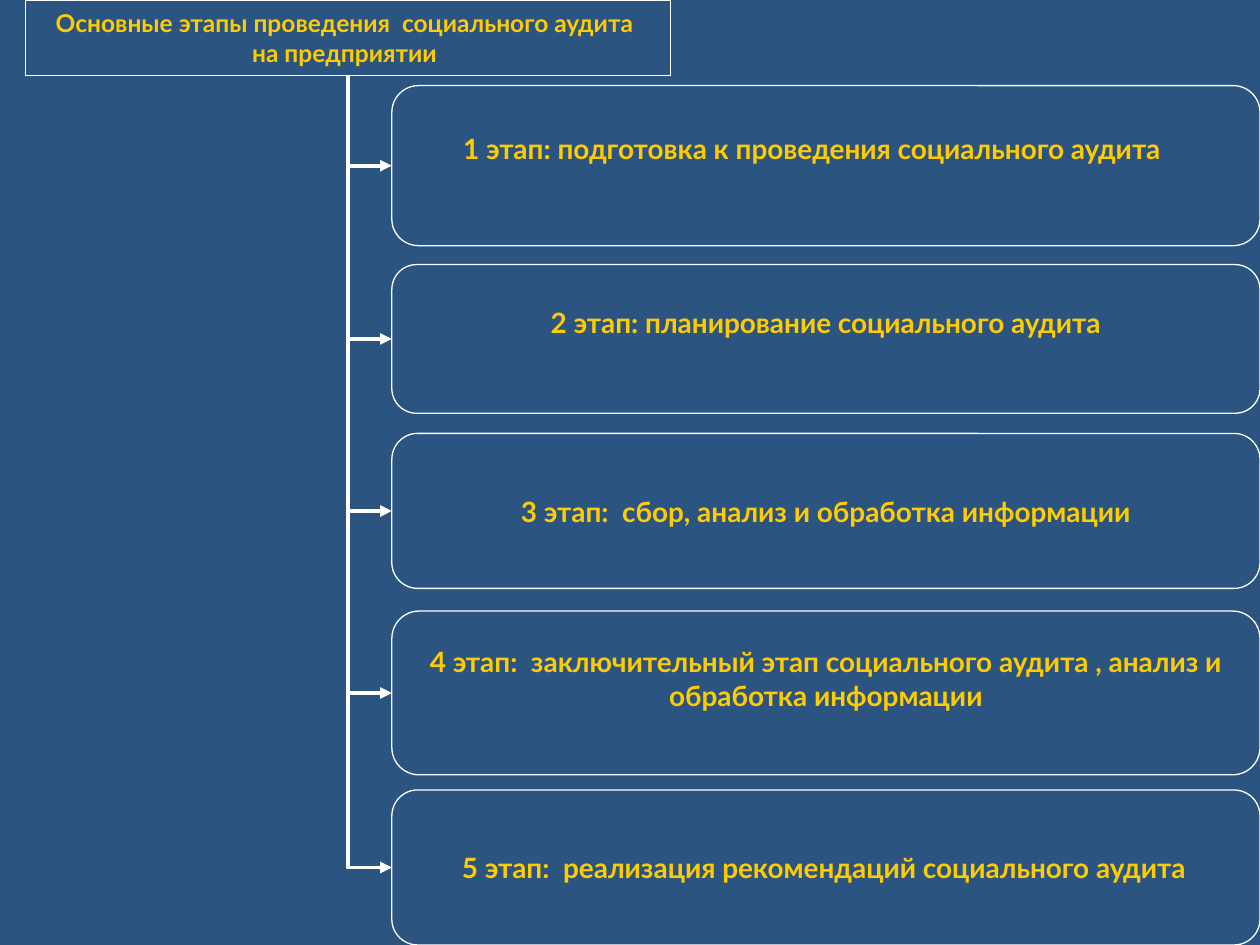
import pptx
import pptx.util
import pptx.dml.color
import pptx.enum.shapes
import pptx.enum.text
from dataclasses import dataclass
from lxml import etree
from pptx.oxml.ns import qn

# Content: text, top, height, right inset, bottom inset (inches)
HEADING = ["Основные этапы проведения  социального аудита", "на предприятии"]
STAGES = [
    ("1 этап: подготовка к проведения социального аудита", 0.68, 1.27, 0.22, 0.27),
    ("2 этап: планирование социального аудита", 2.10, 1.18, 0, 0.27),
    ("3 этап:  сбор, анализ и обработка информации", 3.44, 1.23, 0, 0),
    ("4 этап:  заключительный этап социального аудита , анализ и обработка информации",
     4.85, 1.30, 0, 0.23),
    ("5 этап:  реализация рекомендаций социального аудита", 6.27, 1.23, 0.03, 0),
]


@dataclass(frozen=True)
class Theme:
    font: str = "Lato"
    background: str = "2B5481"
    line: str = "FFFFFF"
    text: str = "FFCC00"
    heading_size: float = 14
    stage_size: float = 16
    border: float = 0.75
    arrow: float = 2.25


THEME = Theme()
inches = pptx.util.Inches
SLIDE_WIDTH, SLIDE_HEIGHT = 10, 7.5
HEADING_LEFT, HEADING_WIDTH, HEADING_HEIGHT = 0.2, 5.12, 0.6
TRUNK = HEADING_LEFT + HEADING_WIDTH / 2
STAGE_LEFT = 3.11


def color(name):
    return pptx.dml.color.RGBColor.from_string(name)


def style_box(box, lines, size, right=0, bottom=0):
    box.fill.solid()
    box.fill.fore_color.rgb = color(THEME.background)
    box.line.color.rgb = color(THEME.line)
    box.line.width = pptx.util.Pt(THEME.border)
    frame = box.text_frame
    frame.text = "\n".join(lines)
    frame.word_wrap = True
    frame.auto_size = pptx.enum.text.MSO_AUTO_SIZE.NONE
    frame.vertical_anchor = pptx.enum.text.MSO_ANCHOR.MIDDLE
    frame.margin_left = frame.margin_top = 0
    frame.margin_right, frame.margin_bottom = inches(right), inches(bottom)
    for para in frame.paragraphs:
        para.alignment = pptx.enum.text.PP_ALIGN.CENTER
        para.font.name = THEME.font
        para.font.size = pptx.util.Pt(size)
        para.font.bold = True
        para.font.color.rgb = color(THEME.text)


def add_arrow(page, middle):
    """Elbow from the heading's bottom edge to the middle of a stage box."""
    arrow = page.shapes.add_connector(
        pptx.enum.shapes.MSO_CONNECTOR.ELBOW, inches(TRUNK), inches(HEADING_HEIGHT),
        inches(STAGE_LEFT), inches(middle))
    arrow.line.color.rgb = color(THEME.line)
    arrow.line.width = pptx.util.Pt(THEME.arrow)
    # A half turn makes the two-segment elbow start at the stage box
    properties = arrow._element.spPr
    properties.find(qn("a:xfrm")).set("rot", "10800000")
    properties.find(qn("a:prstGeom")).set("prst", "bentConnector2")
    etree.SubElement(properties.find(qn("a:ln")), qn("a:headEnd"), type="triangle")
    etree.SubElement(properties, qn("a:effectLst"))


def main():
    deck = pptx.Presentation()
    deck.slide_width, deck.slide_height = inches(SLIDE_WIDTH), inches(SLIDE_HEIGHT)
    page = deck.slides.add_slide(deck.slide_layouts[5])
    page.background.fill.solid()
    page.background.fill.fore_color.rgb = color(THEME.background)

    # Heading
    title = page.shapes.title
    title.left, title.top = inches(HEADING_LEFT), 0
    title.width, title.height = inches(HEADING_WIDTH), inches(HEADING_HEIGHT)
    geometry = etree.SubElement(title._element.spPr, qn("a:prstGeom"), prst="roundRect")
    etree.SubElement(geometry, qn("a:avLst"))
    style_box(title, HEADING, THEME.heading_size, right=0.05)

    # Arrows behind the stage boxes
    for text, top, height, right, bottom in STAGES:
        add_arrow(page, top + height / 2)

    # Stages
    for text, top, height, right, bottom in STAGES:
        box = page.shapes.add_shape(
            pptx.enum.shapes.MSO_SHAPE.ROUNDED_RECTANGLE, inches(STAGE_LEFT), inches(top),
            inches(SLIDE_WIDTH - STAGE_LEFT), inches(height))
        box.shadow.inherit = False
        style_box(box, [text], THEME.stage_size, right, bottom)

    deck.save("out.pptx")


if __name__ == "__main__":
    main()
